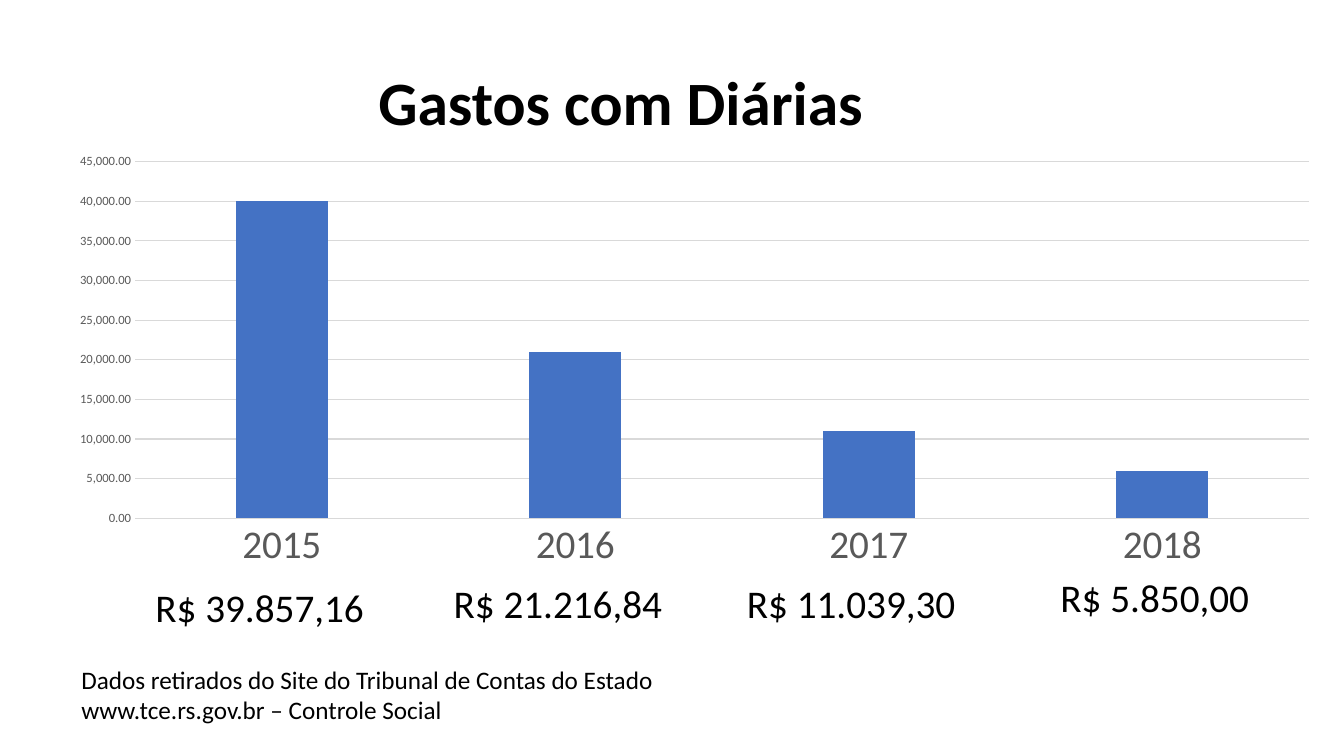
import pptx
import pptx.chart.data
import pptx.dml.color
import pptx.enum.chart
import pptx.enum.text
import pptx.util
from dataclasses import dataclass

Pt = pptx.util.Pt
RGB = pptx.dml.color.RGBColor.from_string


@dataclass(frozen=True)
class Theme:
    font: str = "Calibri"
    text: str = "000000"
    axis: str = "595959"
    grid: str = "D9D9D9"
    bar: str = "4472C4"
    title_size: float = 44
    amount_size: float = 28
    source_size: float = 18
    chart_size: float = 10
    tick_size: float = 9
    line_width: float = 0.75


THEME = Theme()

# Year, rounded spending, label text, label left, top and width
SPENDING = [
    ("2015", 40000, "R$ 39.857,16", 103.9, 413.3, 213),
    ("2016", 21000, "R$ 21.216,84", 316.9, 410.4, 194.4),
    ("2017", 11000, "R$ 11.039,30", 526.4, 410.4, 194.4),
    ("2018", 6000, "R$ 5.850,00", 750.4, 406.1, 170.6),
]
SOURCE = [
    "Dados retirados do Site do Tribunal de Contas do Estado",
    "www.tce.rs.gov.br – Controle Social",
]


def style_font(font, size, color, bold=False):
    font.name = THEME.font
    font.size = Pt(size)
    font.bold = bold
    font.color.rgb = RGB(color)


def style_line(line):
    line.color.rgb = RGB(THEME.grid)
    line.width = Pt(THEME.line_width)


def add_run(p, text, size, bold=False):
    r = p.add_run()
    r.text = text
    style_font(r.font, size, THEME.text, bold)


def add_title(slide, text, left, top, width, height):
    sp = slide.shapes.title
    sp.left, sp.top, sp.width, sp.height = Pt(left), Pt(top), Pt(width), Pt(height)
    tf = sp.text_frame
    tf.auto_size = pptx.enum.text.MSO_AUTO_SIZE.NONE
    tf.vertical_anchor = pptx.enum.text.MSO_ANCHOR.MIDDLE
    p = tf.paragraphs[0]
    p.alignment = pptx.enum.text.PP_ALIGN.CENTER
    p.line_spacing = 0.9
    add_run(p, text, THEME.title_size, bold=True)


def add_text(slide, lines, size, left, top, width, height):
    sp = slide.shapes.add_textbox(Pt(left), Pt(top), Pt(width), Pt(height))
    tf = sp.text_frame
    tf.word_wrap = True
    tf.auto_size = pptx.enum.text.MSO_AUTO_SIZE.SHAPE_TO_FIT_TEXT
    for i, line in enumerate(lines):
        p = tf.add_paragraph() if i else tf.paragraphs[0]
        add_run(p, line, size)


def add_column_chart(slide, left, top, width, height):
    data = pptx.chart.data.CategoryChartData(number_format="#,##0.00")
    data.categories = [row[0] for row in SPENDING]
    data.add_series("Series 1", [row[1] for row in SPENDING])
    chart = slide.shapes.add_chart(
        pptx.enum.chart.XL_CHART_TYPE.COLUMN_CLUSTERED,
        Pt(left), Pt(top), Pt(width), Pt(height), data,
    ).chart
    chart.has_legend = False
    chart.has_title = False
    style_font(chart.font, THEME.chart_size, THEME.text)

    # Columns
    plot = chart.plots[0]
    plot.vary_by_categories = False
    plot.gap_width = 219
    plot.overlap = -27
    fill = plot.series[0].format.fill
    fill.solid()
    fill.fore_color.rgb = RGB(THEME.bar)

    # Axes
    years, values = chart.category_axis, chart.value_axis
    for axis, size in ((years, THEME.amount_size), (values, THEME.tick_size)):
        axis.major_tick_mark = pptx.enum.chart.XL_TICK_MARK.NONE
        axis.minor_tick_mark = pptx.enum.chart.XL_TICK_MARK.NONE
        style_font(axis.tick_labels.font, size, THEME.axis)
    style_line(years.format.line)
    values.format.line.fill.background()
    values.minimum_scale, values.maximum_scale = 0, 45000
    values.major_unit = 5000
    values.has_major_gridlines = True
    style_line(values.major_gridlines.format.line)
    values.tick_labels.number_format = "#,##0.00"
    values.tick_labels.number_format_is_linked = False


def main():
    prs = pptx.Presentation()
    prs.slide_width, prs.slide_height = Pt(960), Pt(540)
    slide = prs.slides.add_slide(prs.slide_layouts[5])

    # Title and chart
    add_title(slide, "Gastos com Diárias", 38.9, 41, 809.3, 68.4)
    add_column_chart(slide, 38.9, 104.1, 914.4, 308.9)

    # Amount under each year
    for _, _, label, left, top, width in SPENDING:
        add_text(slide, [label], THEME.amount_size, left, top, width, 41)

    # Data source
    add_text(slide, SOURCE, THEME.source_size, 51, 470.9, 870.5, 51.1)

    prs.save("out.pptx")


if __name__ == "__main__":
    main()
